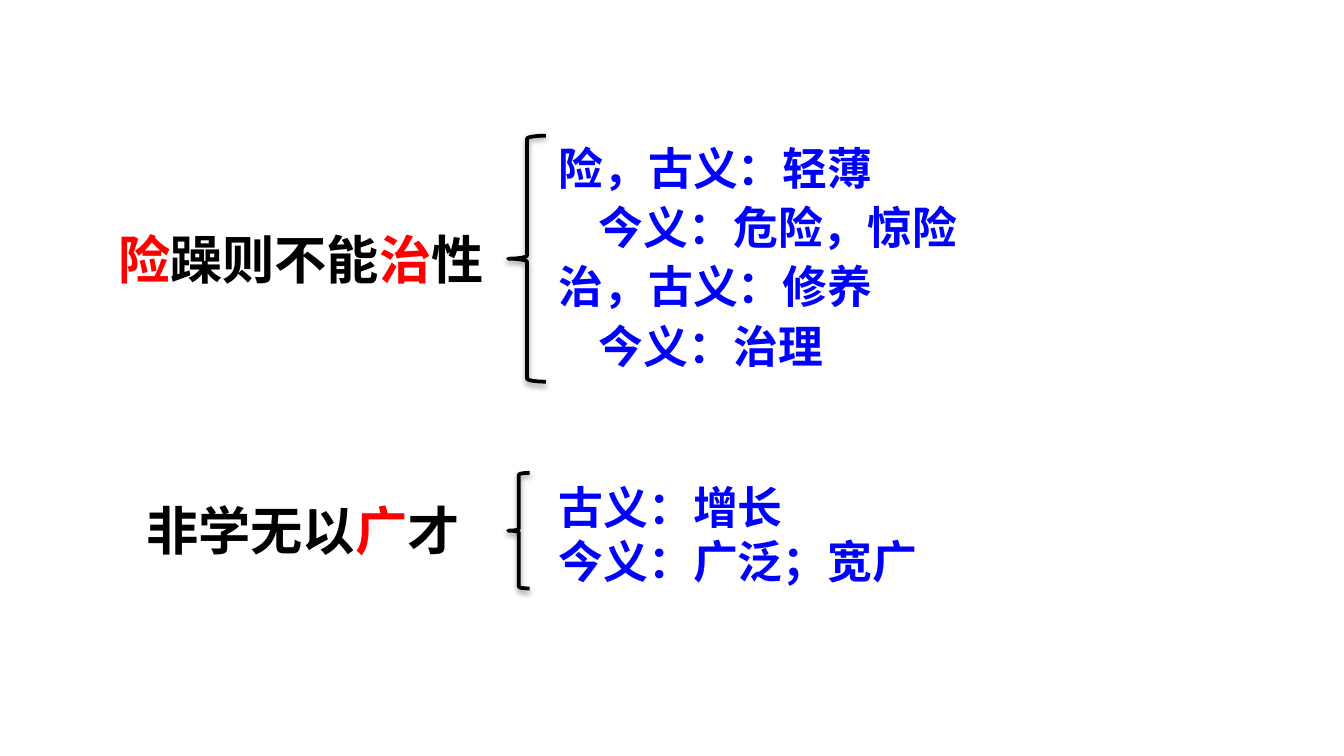
from lxml import etree
from pptx import Presentation
from pptx.dml.color import RGBColor
from pptx.enum.shapes import MSO_SHAPE
from pptx.enum.text import MSO_AUTO_SIZE
from pptx.oxml.ns import qn
from pptx.util import Pt

LEFT_BRACE = MSO_SHAPE.LEFT_BRACE
GROW = MSO_AUTO_SIZE.SHAPE_TO_FIT_TEXT
BLACK = RGBColor(0, 0, 0)
RED = RGBColor(255, 0, 0)
BLUE = RGBColor(0, 0, 255)
FONT = "Noto Sans CJK SC"
INDENT = Pt(21.5)
PHRASE_SIZE = Pt(28)
MEANING_SIZE = Pt(24)

ENTRIES = [
    {
        "phrase": [("险", RED), ("躁则不能", BLACK), ("治", RED), ("性", BLACK)],
        "phrase_box": (56.2, 118, 220.3, 41),
        "brace_box": (272.2, 72.7, 20.2, 131.8),
        "meanings": [("险，古义：轻薄", 0), ("今义：危险，惊险", INDENT),
                     ("治，古义：修养", 0), ("今义：治理", INDENT)],
        "meanings_box": (292.3, 69.1, 357.8, 135.4),
        "line_spacing": 1.1,
    },
    {
        "phrase": [("非学无以", BLACK), ("广", RED), ("才", BLACK)],
        "phrase_box": (71.3, 263.5, 190.8, 41),
        "brace_box": (272.2, 253.4, 11.5, 61.9),
        "meanings": [("古义：增长", 0), ("今义：广泛；宽广", 0)],
        "meanings_box": (292.3, 253.4, 275.8, 65.5),
        "line_spacing": 1.0,
    },
]


def add_text(slide, box, lines, size, line_spacing=1.0):
    """Place lines, each a list of coloured pieces with an indent, in the box."""
    frame = slide.shapes.add_textbox(*map(Pt, box)).text_frame
    frame.word_wrap = True
    frame.auto_size = GROW
    for index, (pieces, indent) in enumerate(lines):
        line = frame.add_paragraph() if index else frame.paragraphs[0]
        line.line_spacing = line_spacing
        if indent:
            line._p.get_or_add_pPr().set("marL", str(int(indent)))
        for wording, color in pieces:
            piece = line.add_run()
            piece.text = wording
            for name, value in {"size": size, "bold": True, "name": FONT}.items():
                setattr(piece.font, name, value)
            piece.font.color.rgb = color
            etree.SubElement(piece._r.get_or_add_rPr(), qn("a:ea"), typeface=FONT)


def add_brace(slide, box):
    """Place a black left brace with a soft shadow below it in the box."""
    brace = slide.shapes.add_shape(LEFT_BRACE, *map(Pt, box))
    brace.fill.background()
    brace.line.color.rgb = BLACK
    brace.line.width = Pt(2)
    brace.shadow.inherit = False
    effects = brace._element.spPr.find(qn("a:effectLst"))
    shadow = etree.SubElement(
        effects, qn("a:outerShdw"), blurRad=str(int(Pt(3.1))),
        dist=str(int(Pt(1.6))), dir="5400000", rotWithShape="0")
    color = etree.SubElement(shadow, qn("a:srgbClr"), val=str(BLACK))
    etree.SubElement(color, qn("a:alpha"), val="38000")


def add_entry(slide, entry):
    """Place a phrase, its brace and the old and modern meanings."""
    meanings = [([(wording, BLUE)], indent) for wording, indent in entry["meanings"]]
    add_text(slide, entry["meanings_box"], meanings, MEANING_SIZE, entry["line_spacing"])
    add_text(slide, entry["phrase_box"], [(entry["phrase"], 0)], PHRASE_SIZE)
    add_brace(slide, entry["brace_box"])


def main():
    """Build the slide and save it."""
    deck = Presentation()
    deck.slide_width = Pt(720)
    deck.slide_height = Pt(405)
    slide = deck.slides.add_slide(deck.slide_layouts[6])
    for entry in ENTRIES:
        add_entry(slide, entry)
    deck.save("out.pptx")


if __name__ == "__main__":
    main()
